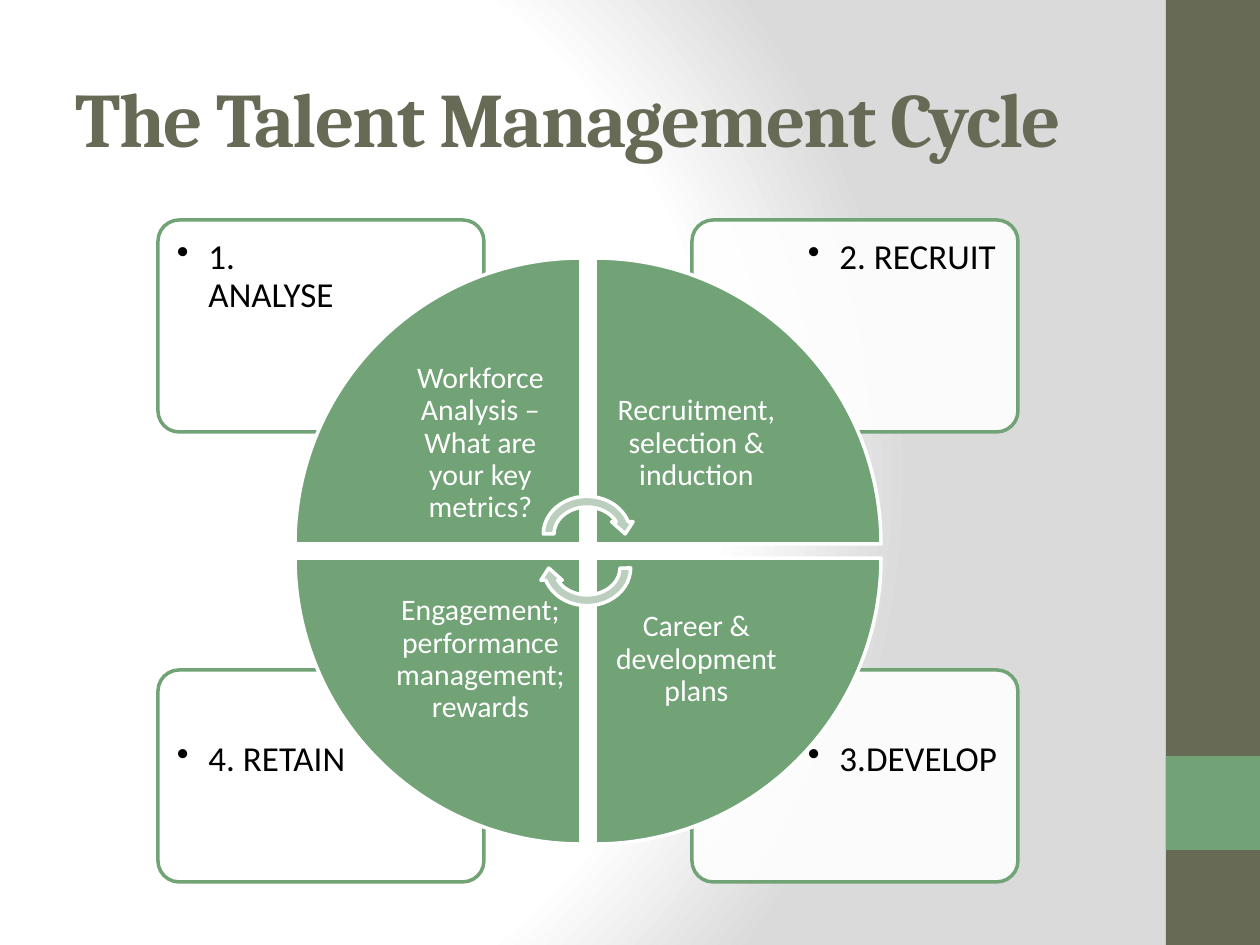
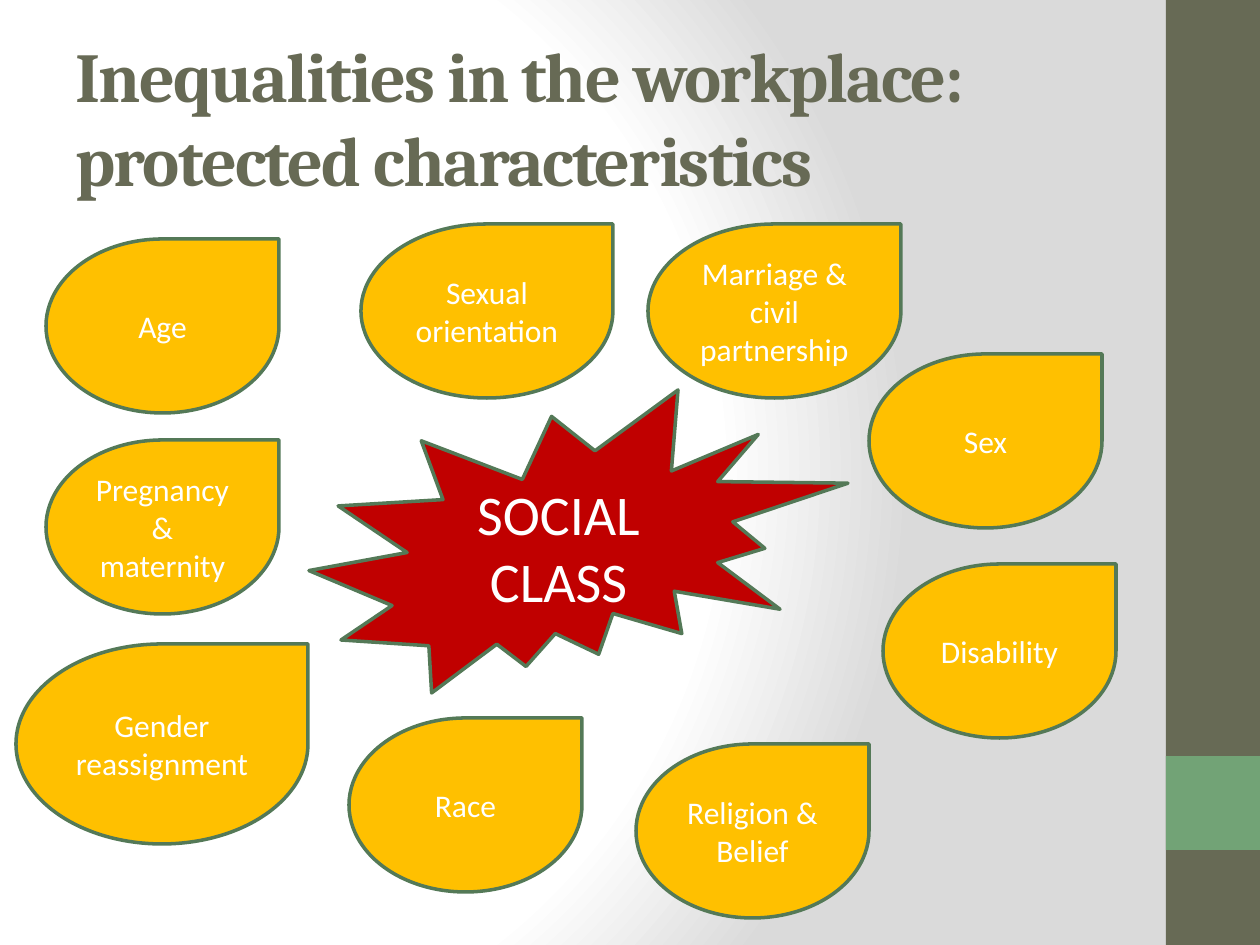
from lxml.etree import SubElement
from pptx import Presentation
from pptx.dml.color import RGBColor
from pptx.enum.shapes import MSO_SHAPE
from pptx.enum.text import MSO_ANCHOR, MSO_AUTO_SIZE, PP_ALIGN
from pptx.oxml import parse_xml
from pptx.oxml.ns import nsdecls, qn
from pptx.util import Emu, Pt

# Content: cycle stages clockwise from top left (column, row, label, detail)
CYCLE = "The Talent Management Cycle"
STAGES = [
    (0, 0, "1. ANALYSE", "Workforce Analysis – What are your key metrics?"),
    (1, 0, "2. RECRUIT", "Recruitment, selection & induction"),
    (1, 1, "3.DEVELOP", "Career & development plans"),
    (0, 1, "4. RETAIN", "Engagement; performance management; rewards"),
]

# Content: characteristics (text, left, top, width, height)
TRAITS = "Inequalities in the workplace: protected characteristics"
WIDE, TALL = 233, 174
DROPS = [
    ("Age", 46, 239, WIDE, TALL),
    ("Sex", 869, 354, WIDE, TALL),
    ("Gender reassignment", 16, 644, 292, 200),
    ("Marriage & civil partnership", 648, 224, 253, TALL),
    ("Race", 349, 718, WIDE, TALL),
    ("Religion & Belief", 636, 744, WIDE, TALL),
    ("Sexual orientation", 361, 224, 252, TALL),
    ("Disability", 883, 564, WIDE, TALL),
    ("Pregnancy & maternity", 46, 440, WIDE, TALL),
]
BURST = ("SOCIAL CLASS", 309, 390, 539, 303)

# Shared style
OLIVE, GREEN, PALE, EDGE = "676A55", "72A376", "BCCEBD", "547957"
GOLD, RED, WHITE, BLACK, GREY = "FFC000", "C00000", "FFFFFF", "000000", "DADADA"
HEAD, BODY = "Cambria", "Calibri"
BANDS = [(1166, 0, 94, 945, OLIVE), (1166, 756, 94, 94, GREEN)]


def px(n):
    return Emu(round(n * 914400 / 126))


def tint(code):
    return RGBColor.from_string(code)


def write(shape, text, size=18, color=WHITE, font=BODY, bold=False, track=0,
          align=PP_ALIGN.CENTER, anchor=MSO_ANCHOR.MIDDLE, inset=None,
          lead=None, bullet=False):
    frame = shape.text_frame
    frame.word_wrap = True
    frame.auto_size = MSO_AUTO_SIZE.NONE
    frame.vertical_anchor = anchor
    if inset is not None:
        frame.margin_left = frame.margin_right = px(inset)
        frame.margin_top = frame.margin_bottom = px(inset)
    para = frame.paragraphs[0]
    para.alignment = align
    if lead:
        para.line_spacing = lead
    if bullet:
        props = para._p.get_or_add_pPr()
        props.set("marL", str(px(31.5)))
        props.set("indent", str(-px(31.5)))
        SubElement(props, qn("a:buChar")).set("char", "•")
    run = para.add_run()
    run.text = text
    run.font.size = Pt(size)
    run.font.name = font
    run.font.bold = bold
    run.font.color.rgb = tint(color)
    if track:
        run.font._element.set("spc", str(track))


def draw(slide, kind, x, y, w, h, fill, line=None, turn=0, alpha=None):
    shape = slide.shapes.add_shape(kind, px(x), px(y), px(w), px(h))
    shape.shadow.inherit = False
    shape.rotation = turn
    shape.fill.solid()
    shape.fill.fore_color.rgb = tint(fill)
    if alpha:
        color = shape._element.spPr.find(qn("a:solidFill"))[0]
        SubElement(color, qn("a:alpha")).set("val", str(alpha * 1000))
    if line:
        shape.line.color.rgb = tint(line)
        shape.line.width = Pt(2)
    else:
        shape.line.fill.background()
    return shape


def label(slide, text, x, y, w, h, **form):
    write(slide.shapes.add_textbox(px(x), px(y), px(w), px(h)), text, **form)


def shade(master):
    master.background.fill.solid()
    props = master._element.cSld.find(qn("p:bg")).find(qn("p:bgPr"))
    stops = "".join(
        f'<a:gs pos="{at * 1000}"><a:srgbClr val="{code}"/></a:gs>'
        for at, code in [(0, WHITE), (75, WHITE), (100, GREY)])
    props.replace(props[0], parse_xml(
        f'<a:gradFill {nsdecls("a")} rotWithShape="1"><a:gsLst>{stops}</a:gsLst>'
        '<a:path path="circle"><a:fillToRect l="20000" t="50000" r="100000"'
        ' b="50000"/></a:path></a:gradFill>'))


def start(deck, text, size):
    slide = deck.slides.add_slide(deck.slide_layouts[5])
    for *box, color in BANDS:
        draw(slide, MSO_SHAPE.RECTANGLE, *box, color)
    title = slide.shapes.title
    title.left, title.top, title.width, title.height = map(px, (63, 38, 1050, 157))
    write(title, text, size=size, color=OLIVE, font=HEAD, bold=True,
          track=-100, align=PP_ALIGN.LEFT)
    return slide


def cycle(deck):
    slide = start(deck, CYCLE, 44)
    # Corner cards, each label set in its outer corner
    for col, row, name, _ in STAGES:
        x, y = 158 + 534 * col, 220 + 450 * row
        card = draw(slide, MSO_SHAPE.ROUNDED_RECTANGLE, x, y, 326, 212,
                    WHITE, GREEN, alpha=90)
        card.adjustments[0] = 0.1
        label(slide, name, x + 5 + 97 * col, y + 5 + 52 * row, 219, 150,
              size=20, color=BLACK, align=PP_ALIGN.LEFT,
              anchor=MSO_ANCHOR.TOP, inset=14, lead=0.9, bullet=True)
    # Wheel quarters, each text set toward the hub
    for i, (col, row, _, text) in enumerate(STAGES):
        x, y = 295 + 300 * col, 258 + 300 * row
        draw(slide, MSO_SHAPE.PIE_WEDGE, x, y, 286, 286, GREEN, WHITE, 90 * i)
        label(slide, text, x + 84 * (1 - col), y + 84 * (1 - row), 203, 203,
              size=17, inset=16, lead=0.9)
    # Hub arrows
    for y, turn in [(491, 0), (525, 180)]:
        draw(slide, MSO_SHAPE.CIRCULAR_ARROW, 538, y, 98, 86, PALE, WHITE, turn)


def traits(deck):
    slide = start(deck, TRAITS, 40)
    for text, *box in DROPS:
        write(draw(slide, MSO_SHAPE.TEAR, *box, GOLD, EDGE), text)
    text, *box = BURST
    write(draw(slide, MSO_SHAPE.EXPLOSION2, *box, RED, EDGE), text, size=32)


def main():
    deck = Presentation()
    deck.slide_width, deck.slide_height = px(1260), px(945)
    shade(deck.slide_master)
    cycle(deck)
    traits(deck)
    deck.save("out.pptx")


if __name__ == "__main__":
    main()
